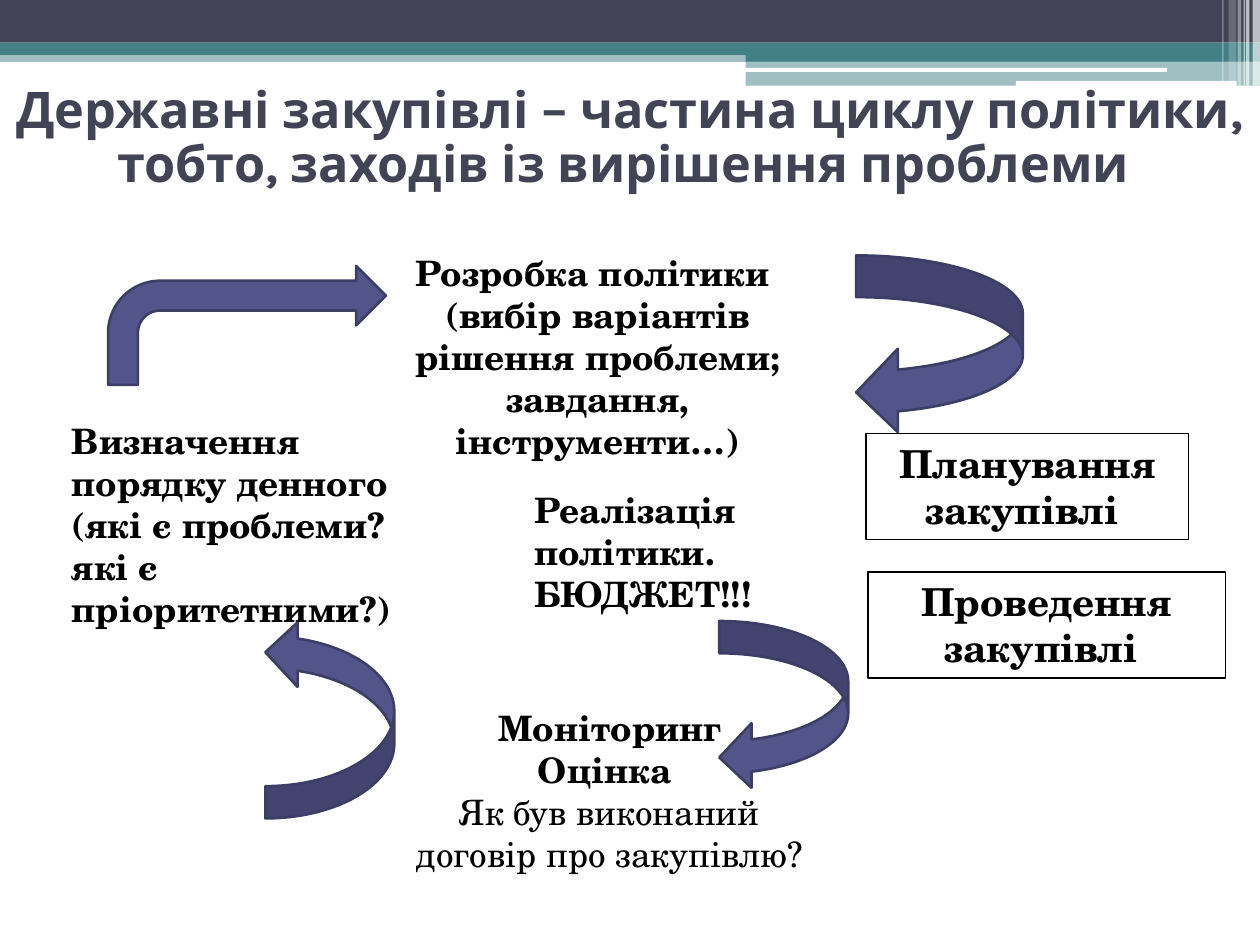
"""Build a slide on public procurement as a part of the policy cycle."""
from typing import NamedTuple, Optional

from lxml.etree import SubElement
from pptx import Presentation
from pptx.dml.color import RGBColor
from pptx.enum.shapes import MSO_SHAPE as Kind
from pptx.enum.text import MSO_ANCHOR as Anchor, MSO_AUTO_SIZE as Fit, PP_ALIGN as Align
from pptx.oxml.ns import qn
from pptx.util import Cm, Pt

BLACK = RGBColor(0x00, 0x00, 0x00)
WHITE = RGBColor(0xFF, 0xFF, 0xFF)
SLATE = RGBColor(0x42, 0x44, 0x56)
TEAL = RGBColor(0x43, 0x80, 0x86)
VIOLET = RGBColor(0x53, 0x54, 0x8A)
INDIGO = RGBColor(0x3D, 0x3E, 0x66)
SERIF = "TeX Gyre Schola"
SANS = "Karla"


class Box(NamedTuple):
    left: float
    top: float
    width: float
    height: float


class Band(NamedTuple):
    box: Box
    color: RGBColor
    alpha: int = 100
    kind: Kind = Kind.RECTANGLE


class Arrow(NamedTuple):
    box: Box
    kind: Kind = Kind.CURVED_LEFT_ARROW
    flip: bool = False


class Line(NamedTuple):
    text: str
    bold: bool = True


class Note(NamedTuple):
    box: Box
    lines: tuple[Line, ...]
    align: Align = Align.CENTER
    size: float = 20
    frame: bool = False


BANDS = (
    Band(Box(0, 1.02, 25.4, 0.23), TEAL, 50),
    Band(Box(0, 0, 25.4, 0.86), SLATE),
    Band(Box(0, 0.86, 25.4, 0.25), TEAL),
    Band(Box(15.03, 0.99, 10.37, 0.25), TEAL),
    Band(Box(15.03, 1.23, 10.37, 0.5), TEAL, 50),
    Band(Box(15.02, 1.37, 8.51, 0.08), WHITE, kind=Kind.ROUNDED_RECTANGLE),
    Band(Box(20.48, 1.63, 4.45, 0.1), WHITE, kind=Kind.ROUNDED_RECTANGLE),
    Band(Box(25.25, 0, 0.15, 1.73), WHITE, 65),
    Band(Box(25.12, 0, 0.07, 1.73), WHITE, 65),
    Band(Box(25.07, 0, 0.03, 1.73), WHITE, 60),
    Band(Box(24.95, 0, 0.07, 1.73), WHITE, 40),
    Band(Box(24.77, 0, 0.15, 1.63), WHITE, 20),
    Band(Box(24.64, 0, 0.03, 1.63), WHITE, 30),
)
ARROWS = (
    Arrow(Box(17.26, 5.15, 3.36, 3.6)),
    Arrow(Box(14.5, 12.52, 2.6, 3.4)),
    Arrow(Box(2.18, 5.36, 5.6, 2.4), Kind.BENT_ARROW),
    Arrow(Box(5.35, 12.5, 2.6, 4), flip=True),
)
NOTES = (
    Note(Box(1.2, 8.33, 7.2, 4.52),
         (Line("Визначення порядку денного (які є проблеми? які є пріоритетними?)"),),
         Align.LEFT),
    Note(Box(7.75, 4.95, 8.6, 3.68),
         (Line("Розробка політики "),
          Line("(вибір варіантів рішення проблеми; завдання, інструменти…)"))),
    Note(Box(10.52, 9.72, 6.8, 2.82),
         (Line("Реалізація політики. БЮДЖЕТ!!!"),), Align.LEFT),
    Note(Box(7.93, 14.12, 8.73, 3.68),
         (Line("Моніторинг"), Line("Оцінка "),
          Line("Як був виконаний договір про закупівлю?", False))),
    Note(Box(17.46, 8.74, 6.5, 2.14), (Line("Планування закупівлі "),),
         size=22, frame=True),
    Note(Box(17.5, 11.53, 7.2, 2.14), (Line("Проведення закупівлі "),),
         size=22, frame=True),
)
HEAD = Line("Державні закупівлі – частина циклу політики, "
            "тобто, заходів із вирішення проблеми ")


def write(frame, lines: tuple[Line, ...], *, size: float, font: str = SERIF,
          color: RGBColor = BLACK, align: Align = Align.CENTER,
          anchor: Anchor = Anchor.TOP, space: Optional[float] = None) -> None:
    frame.word_wrap = True
    frame.auto_size = Fit.NONE
    frame.vertical_anchor = anchor
    for i, line in enumerate(lines):
        para = frame.add_paragraph() if i else frame.paragraphs[0]
        para.alignment = align
        para.line_spacing = space
        run = para.add_run()
        run.text = line.text
        run.font.name = font
        run.font.size = Pt(size)
        run.font.bold = line.bold
        run.font.color.rgb = color


def shape(slide, kind: Kind, box: Box, fill: Optional[RGBColor] = None,
          edge: Optional[RGBColor] = None, weight: float = 0.75):
    item = slide.shapes.add_shape(kind, *map(Cm, box))
    item.shadow.inherit = False
    if fill is None:
        item.fill.background()
    else:
        item.fill.solid()
        item.fill.fore_color.rgb = fill
    if edge is None:
        item.line.fill.background()
    else:
        item.line.color.rgb = edge
        item.line.width = Pt(weight)
    return item


def draw_band(slide, band: Band) -> None:
    item = shape(slide, band.kind, band.box, band.color)
    if band.alpha < 100:
        color = item.element.spPr.find(qn("a:solidFill"))[0]
        SubElement(color, qn("a:alpha")).set("val", str(band.alpha * 1000))


def draw_arrow(slide, arrow: Arrow) -> None:
    item = shape(slide, arrow.kind, arrow.box, VIOLET, INDIGO, 1.5)
    if arrow.flip:
        item.element.spPr.find(qn("a:xfrm")).set("flipV", "1")


def draw_note(slide, note: Note) -> None:
    if note.frame:
        item = shape(slide, Kind.RECTANGLE, note.box, edge=BLACK)
    else:
        item = slide.shapes.add_textbox(*map(Cm, note.box))
    write(item.text_frame, note.lines, size=note.size, align=note.align)


def draw_title(slide, box: Box) -> None:
    title = slide.shapes.title
    title.left, title.top, title.width, title.height = map(Cm, box)
    write(title.text_frame, (HEAD,), size=28.8, font=SANS, color=SLATE,
          anchor=Anchor.MIDDLE, space=0.9)


def main() -> None:
    deck = Presentation()
    deck.slide_width, deck.slide_height = Cm(25.4), Cm(19.05)
    slide = deck.slides.add_slide(deck.slide_layouts[5])
    for band in BANDS:
        draw_band(slide, band)
    for note in NOTES:
        draw_note(slide, note)
    for arrow in ARROWS:
        draw_arrow(slide, arrow)
    draw_title(slide, Box(0, 1.32, 25.4, 2.97))
    deck.save("out.pptx")


if __name__ == "__main__":
    main()
